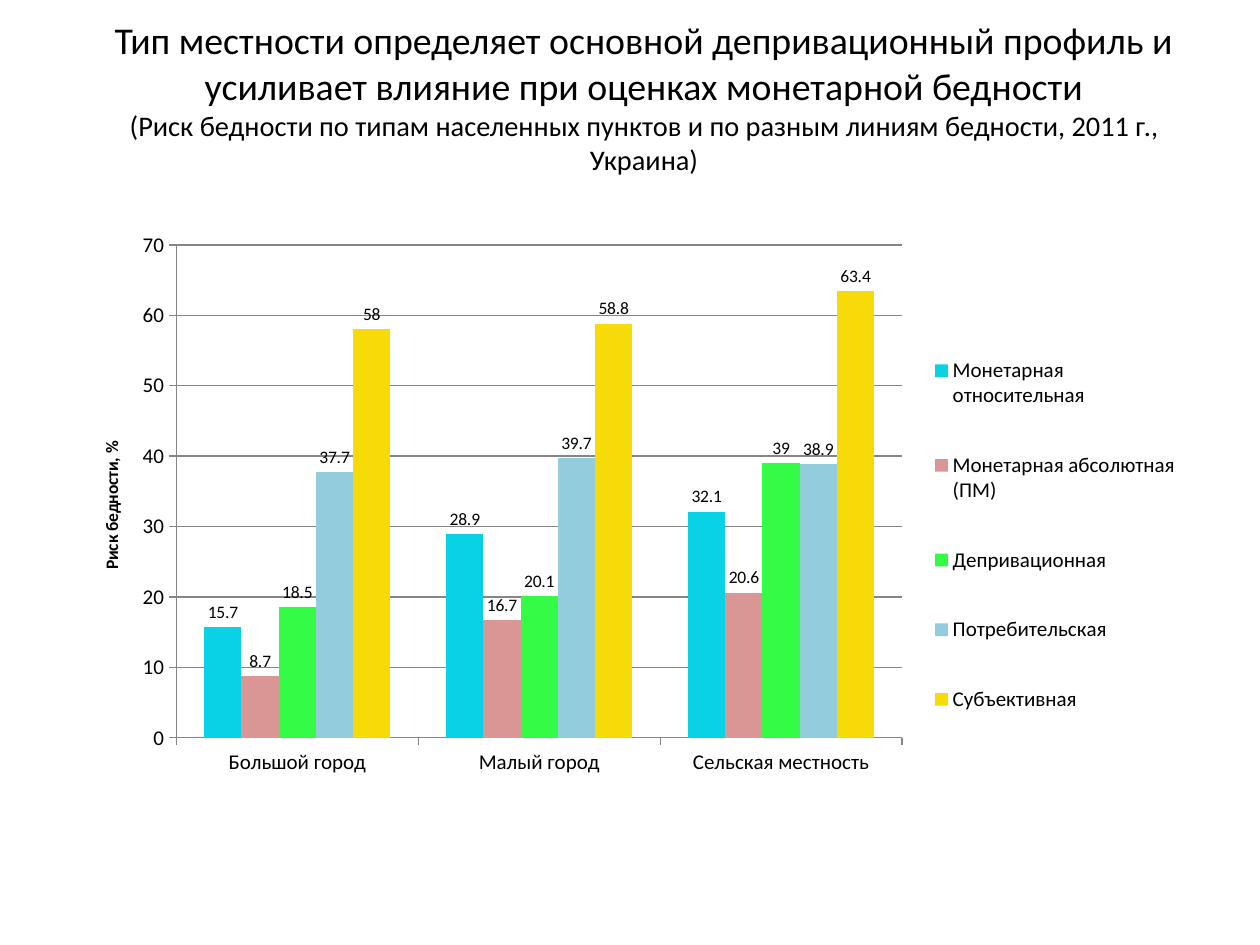
import dataclasses

import lxml.etree
import pptx
import pptx.chart.data
import pptx.dml.color
import pptx.enum.chart
import pptx.enum.text
import pptx.oxml.ns
import pptx.util

qn = pptx.oxml.ns.qn


@dataclasses.dataclass(frozen=True)
class Theme:
    font: str = "Calibri"
    text: str = "000000"
    grid: str = "868686"
    series: tuple = ("09D2E7", "D99694", "33FB46", "93CDDD", "F7DB09")
    title: float = 21.6
    subtitle: float = 16.2
    axis: float = 12
    label: float = 10
    line: float = 0.75


def px(n):
    return pptx.util.Emu(round(n * 914400 / 126))


def rgb(value):
    return pptx.dml.color.RGBColor.from_string(value)


def place(parent, **values):
    for old in parent.findall(qn("c:layout")):
        parent.remove(old)
    layout = lxml.etree.Element(qn("c:layout"))
    manual = lxml.etree.SubElement(layout, qn("c:manualLayout"))
    for tag, value in values.items():
        lxml.etree.SubElement(manual, qn("c:" + tag)).set("val", str(value))
    overlay = parent.find(qn("c:overlay"))
    if overlay is None:
        parent.insert(0, layout)
    else:
        overlay.addprevious(layout)


@dataclasses.dataclass
class Builder:
    theme: Theme
    slide: object

    def font(self, font, size):
        font.name = self.theme.font
        font.size = pptx.util.Pt(size)
        font.color.rgb = rgb(self.theme.text)

    def title(self, box, heading, subtitle):
        sp = self.slide.shapes.title
        sp.left, sp.top, sp.width, sp.height = map(px, box)
        tf = sp.text_frame
        tf.word_wrap = True
        tf.auto_size = pptx.enum.text.MSO_AUTO_SIZE.NONE
        tf.vertical_anchor = pptx.enum.text.MSO_ANCHOR.MIDDLE
        p = tf.paragraphs[0]
        p.alignment = pptx.enum.text.PP_ALIGN.CENTER
        r = p.add_run()
        r.text = heading
        self.font(r.font, self.theme.title)
        p.add_line_break()
        r = p.add_run()
        r.text = subtitle
        self.font(r.font, self.theme.subtitle)

    def line(self, fmt):
        fmt.line.color.rgb = rgb(self.theme.grid)
        fmt.line.width = pptx.util.Pt(self.theme.line)

    def columns(self, box, categories, series, axis_title):
        data = pptx.chart.data.CategoryChartData()
        data.categories = categories
        for name, values in series:
            data.add_series(name, values)
        kind = pptx.enum.chart.XL_CHART_TYPE.COLUMN_CLUSTERED
        chart = self.slide.shapes.add_chart(kind, *map(px, box), data).chart
        self.font(chart.font, self.theme.label)
        chart.has_title = False
        plot = chart.plots[0]
        plot.gap_width = 150
        plot.overlap = 0
        plot.vary_by_categories = False
        for ser, color in zip(plot.series, self.theme.series):
            ser.format.fill.solid()
            ser.format.fill.fore_color.rgb = rgb(color)
            labels = ser.data_labels
            labels.show_value = True
            labels.position = pptx.enum.chart.XL_LABEL_POSITION.OUTSIDE_END
            self.font(labels.font, self.theme.label)
        for axis in (chart.category_axis, chart.value_axis):
            axis.major_tick_mark = pptx.enum.chart.XL_TICK_MARK.OUTSIDE
            self.font(axis.tick_labels.font, self.theme.axis)
            self.line(axis.format)
        self.value_axis(chart.value_axis, axis_title)
        self.legend(chart)
        place(chart.element.xpath(".//c:plotArea")[0], layoutTarget="inner",
              xMode="edge", yMode="edge", x=0.1, y=0.04, w=0.64, h=0.79)

    def value_axis(self, axis, title):
        axis.minimum_scale, axis.maximum_scale, axis.major_unit = 0, 70, 10
        axis.has_major_gridlines = True
        self.line(axis.major_gridlines.format)
        tf = axis.axis_title.text_frame
        tf.text = title
        font = tf.paragraphs[0].font
        self.font(font, self.theme.label)
        font.bold = True
        element = axis.axis_title.element
        body = element.xpath(".//a:bodyPr")[0]
        body.set("rot", "-5400000")
        body.set("vert", "horz")
        place(element, xMode="edge", yMode="edge", x=0.03, y=0.35)

    def legend(self, chart):
        chart.has_legend = True
        legend = chart.legend
        legend.position = pptx.enum.chart.XL_LEGEND_POSITION.RIGHT
        legend.include_in_layout = False
        self.font(legend.font, self.theme.axis)
        place(chart.element.xpath(".//c:legend")[0],
              xMode="edge", yMode="edge", x=0.76, y=0.15, w=0.23, h=0.71)


def main():
    prs = pptx.Presentation()
    prs.slide_width, prs.slide_height = px(1260), px(945)
    b = Builder(Theme(), prs.slides.add_slide(prs.slide_layouts[5]))
    b.title(
        (63, 38, 1162, 117),
        "Тип местности определяет основной депривационный профиль и "
        "усиливает влияние при оценках монетарной бедности",
        "(Риск бедности по типам населенных пунктов и по разным линиям "
        "бедности, 2011 г., Украина)",
    )
    b.columns(
        (63, 220, 1134, 624),
        ("Большой город", "Малый город", "Сельская местность"),
        (
            ("Монетарная относительная", (15.7, 28.9, 32.1)),
            ("Монетарная абсолютная (ПМ)", (8.7, 16.7, 20.6)),
            ("Депривационная", (18.5, 20.1, 39)),
            ("Потребительская", (37.7, 39.7, 38.9)),
            ("Субъективная", (58, 58.8, 63.4)),
        ),
        "Риск бедности, %",
    )
    prs.save("out.pptx")


if __name__ == "__main__":
    main()
